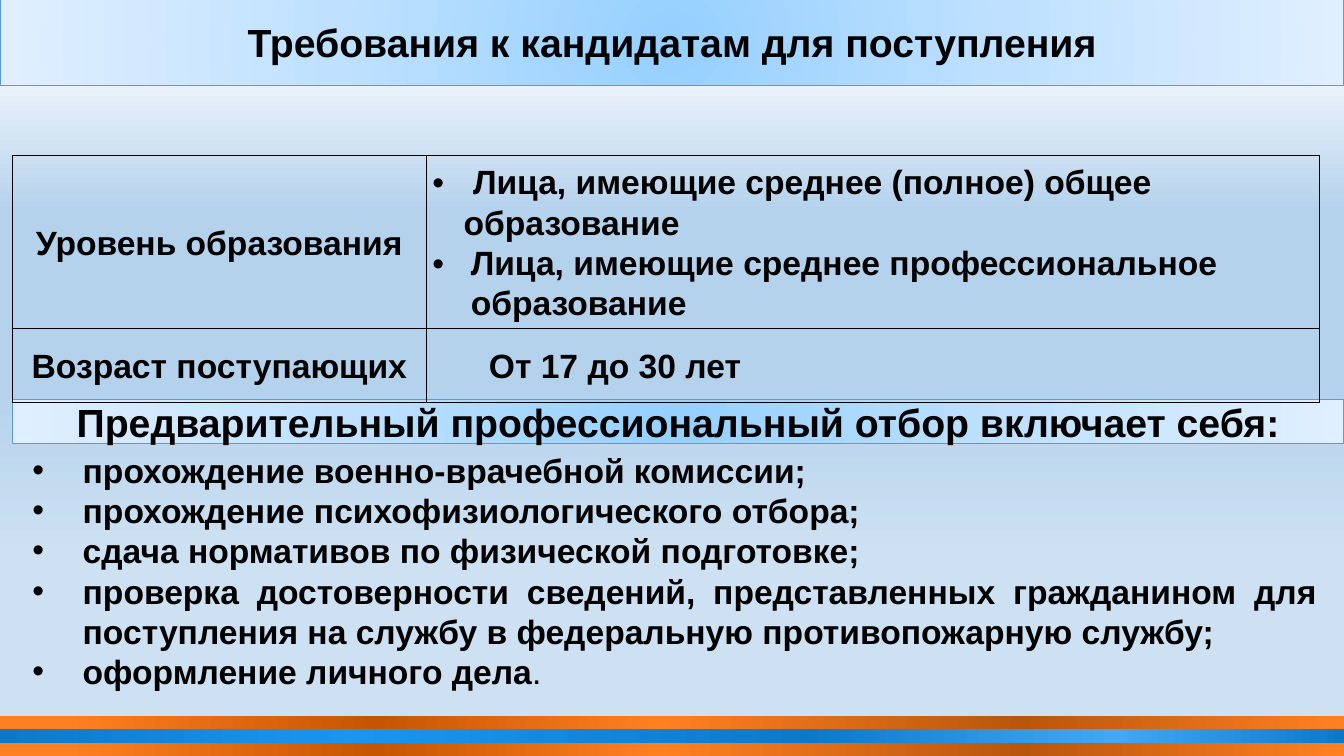
"""Build the slide on requirements for applicants."""
from lxml import etree
from pptx import Presentation
from pptx.dml.color import RGBColor
from pptx.enum.shapes import MSO_SHAPE
from pptx.enum.text import MSO_ANCHOR, MSO_AUTO_SIZE, PP_ALIGN
from pptx.oxml.ns import qn
from pptx.util import Inches, Pt

RECTANGLE = MSO_SHAPE.RECTANGLE
MIDDLE, TOP = MSO_ANCHOR.MIDDLE, MSO_ANCHOR.TOP
NO_AUTOFIT = MSO_AUTO_SIZE.NONE
LEFT, CENTER, JUSTIFY = PP_ALIGN.LEFT, PP_ALIGN.CENTER, PP_ALIGN.JUSTIFY

WIDTH, HEIGHT = Inches(13.33), Inches(7.5)
FONT = "Arial"
BLACK = RGBColor(0x00, 0x00, 0x00)
EDGE = RGBColor(0x5B, 0x9B, 0xD5)
SNOW = RGBColor(0xF7, 0xFA, 0xFD)
SKY = RGBColor(0xB5, 0xD2, 0xEC)
MIST = RGBColor(0xCE, 0xE1, 0xF2)
GLOW = RGBColor(0x96, 0xD0, 0xFF)
PALE = RGBColor(0xBF, 0xE1, 0xFF)
ICE = RGBColor(0xE0, 0xEF, 0xFF)
ORANGE = RGBColor(0xFF, 0x80, 0x21)
RUST = RGBColor(0xBA, 0x56, 0x0C)
EMBER = RGBColor(0xC7, 0x55, 0x00)
BLUE = RGBColor(0x0D, 0x79, 0xCA)
AZURE = RGBColor(0x43, 0xA7, 0xF2)
BRIGHT = RGBColor(0x1B, 0x95, 0xF0)

PAGE_STOPS = [(7, SNOW), (28, SKY), (51, SKY), (74, MIST)]
BANNER_STOPS = [(0, GLOW), (50, PALE), (100, ICE)]
ORANGE_STOPS = [(0, ORANGE), (24, RUST), (51, ORANGE), (72, EMBER), (95, ORANGE)]
BLUE_STOPS = [(0, BLUE), (17, AZURE), (40, BLUE), (74, BRIGHT), (100, BLUE)]

TITLE = "Требования к кандидатам для поступления"
SELECTION = "Предварительный профессиональный отбор включает себя:"
REQUIREMENTS = [
    ("Уровень образования", [
        (" Лица, имеющие среднее (полное) общее образование", 0.31, True),
        ("Лица, имеющие среднее профессиональное образование", 0.38, True)]),
    ("Возраст поступающих", [("От 17 до 30 лет", 0.56, False)]),
]
STEPS = [
    [("прохождение военно-врачебной комиссии;", True)],
    [("прохождение психофизиологического отбора;", True)],
    [("сдача нормативов по физической подготовке;", True)],
    [("проверка достоверности сведений, представленных гражданином для "
      "поступления на службу в федеральную противопожарную службу;", True)],
    [("оформление личного дела", True), (".", False)],
]


def share(left, top, width, height):
    """Turn percentages of the slide into lengths."""
    return (int(WIDTH * left / 100), int(HEIGHT * top / 100),
            int(WIDTH * width / 100), int(HEIGHT * height / 100))


def place(shape, area):
    """Move and size a shape to an area."""
    shape.left, shape.top, shape.width, shape.height = area


def set_gradient(fill, element, stops, angle=None):
    """Give a fill a linear gradient, or a circular one without an angle."""
    fill.gradient()
    gradient = next(element.iter(qn("a:gradFill")))
    for child in list(gradient):
        gradient.remove(child)
    stop_list = etree.SubElement(gradient, qn("a:gsLst"))
    for position, color in stops:
        stop = etree.SubElement(stop_list, qn("a:gs"), pos=str(position * 1000))
        etree.SubElement(stop, qn("a:srgbClr"), val=str(color))
    if angle is None:
        circle = etree.SubElement(gradient, qn("a:path"), path="circle")
        etree.SubElement(circle, qn("a:fillToRect"),
                         {side: "50000" for side in "ltrb"})
    else:
        etree.SubElement(gradient, qn("a:lin"), ang=str(angle * 60000), scaled="0")


def write(para, spans, size, align, spacing=1.0):
    """Fill a paragraph with runs of text and weight."""
    para.alignment = align
    para.line_spacing = spacing
    para.space_before = para.space_after = Pt(0)
    for text, bold in spans:
        span = para.add_run()
        span.text = text
        span.font.name, span.font.size, span.font.bold = FONT, Pt(size), bold
        span.font.color.rgb = BLACK


def indent(para, margin, bulleted):
    """Indent a paragraph, hanging it from a bullet if asked."""
    props = para._p.get_or_add_pPr()
    props.set("marL", str(Inches(margin)))
    props.set("indent", str(-Inches(margin) if bulleted else 0))
    if bulleted:
        etree.SubElement(props, qn("a:buFont"), typeface=FONT)
        etree.SubElement(props, qn("a:buChar"), char="•")


def next_para(frame, index):
    """Return the first paragraph of a frame, or a new one after it."""
    return frame.add_paragraph() if index else frame.paragraphs[0]


def style_banner(shape, text):
    """Make a shape a glowing banner with a centred heading."""
    set_gradient(shape.fill, shape.element, BANNER_STOPS)
    shape.line.color.rgb, shape.line.width = EDGE, Pt(0.75)
    frame = shape.text_frame
    frame.auto_size, frame.word_wrap = NO_AUTOFIT, True
    frame.vertical_anchor = MIDDLE
    write(frame.paragraphs[0], [(text, True)], 28, CENTER)


def add_box(page, area):
    """Add a rectangle without a shadow."""
    box = page.shapes.add_shape(RECTANGLE, *area)
    box.shadow.inherit = False
    return box


def add_stripes(page):
    """Add the equal stripes along the bottom edge."""
    rise = 1.78
    stripes = [ORANGE_STOPS, BLUE_STOPS, ORANGE_STOPS]
    for index, stops in enumerate(stripes):
        top = 100 - rise * (len(stripes) - index)
        stripe = add_box(page, share(0, top, 100, rise))
        set_gradient(stripe.fill, stripe.element, stops, 180)
        stripe.line.fill.background()


def style_cell(cell):
    """Give a cell black borders, even margins and no fill."""
    props = cell._tc.get_or_add_tcPr()
    for side in "LRTB":
        edge = etree.SubElement(props, qn(f"a:ln{side}"), w=str(Pt(1)))
        solid = etree.SubElement(edge, qn("a:solidFill"))
        etree.SubElement(solid, qn("a:srgbClr"), val=str(BLACK))
    cell.fill.background()
    cell.vertical_anchor = MIDDLE
    cell.margin_left = cell.margin_right = Inches(0.06)
    cell.margin_top = cell.margin_bottom = Inches(0.06)


def add_requirements(page):
    """Add the table of requirements."""
    area = share(0.9, 20.6, 97.3, 32.6)
    table = page.shapes.add_table(len(REQUIREMENTS), 2, *area).table
    table.first_row = table.horz_banding = False
    for column, part in zip(table.columns, (30.83, 66.47)):
        column.width = int(WIDTH * part / 100)
    for row, part in zip(table.rows, (22.85, 9.75)):
        row.height = int(HEIGHT * part / 100)
    for row, (label, details) in zip(table.rows, REQUIREMENTS):
        name, value = row.cells
        style_cell(name)
        style_cell(value)
        write(name.text_frame.paragraphs[0], [(label, True)], 24, CENTER, 1.07)
        for index, (text, margin, bulleted) in enumerate(details):
            para = next_para(value.text_frame, index)
            write(para, [(text, True)], 24, LEFT, 1.07)
            indent(para, margin, bulleted)


def fill_steps(body):
    """List the selection steps in the body placeholder."""
    place(body, share(1.65, 58.8, 97.07, 33.6))
    frame = body.text_frame
    frame.auto_size, frame.word_wrap = NO_AUTOFIT, True
    frame.vertical_anchor = TOP
    for index, spans in enumerate(STEPS):
        para = next_para(frame, index)
        write(para, spans, 24, JUSTIFY)
        indent(para, 0.5, True)


def main():
    """Build and save the deck."""
    deck = Presentation()
    deck.slide_width, deck.slide_height = WIDTH, HEIGHT
    page = deck.slides.add_slide(deck.slide_layouts[1])
    set_gradient(page.background.fill, page.element, PAGE_STOPS, 90)
    add_stripes(page)
    place(page.shapes.title, share(0, -0.13, 100, 11.4))
    style_banner(page.shapes.title, TITLE)
    style_banner(add_box(page, share(0.9, 52.8, 99.1, 5.9)), SELECTION)
    add_requirements(page)
    fill_steps(page.placeholders[1])
    deck.save("out.pptx")


if __name__ == "__main__":
    main()
